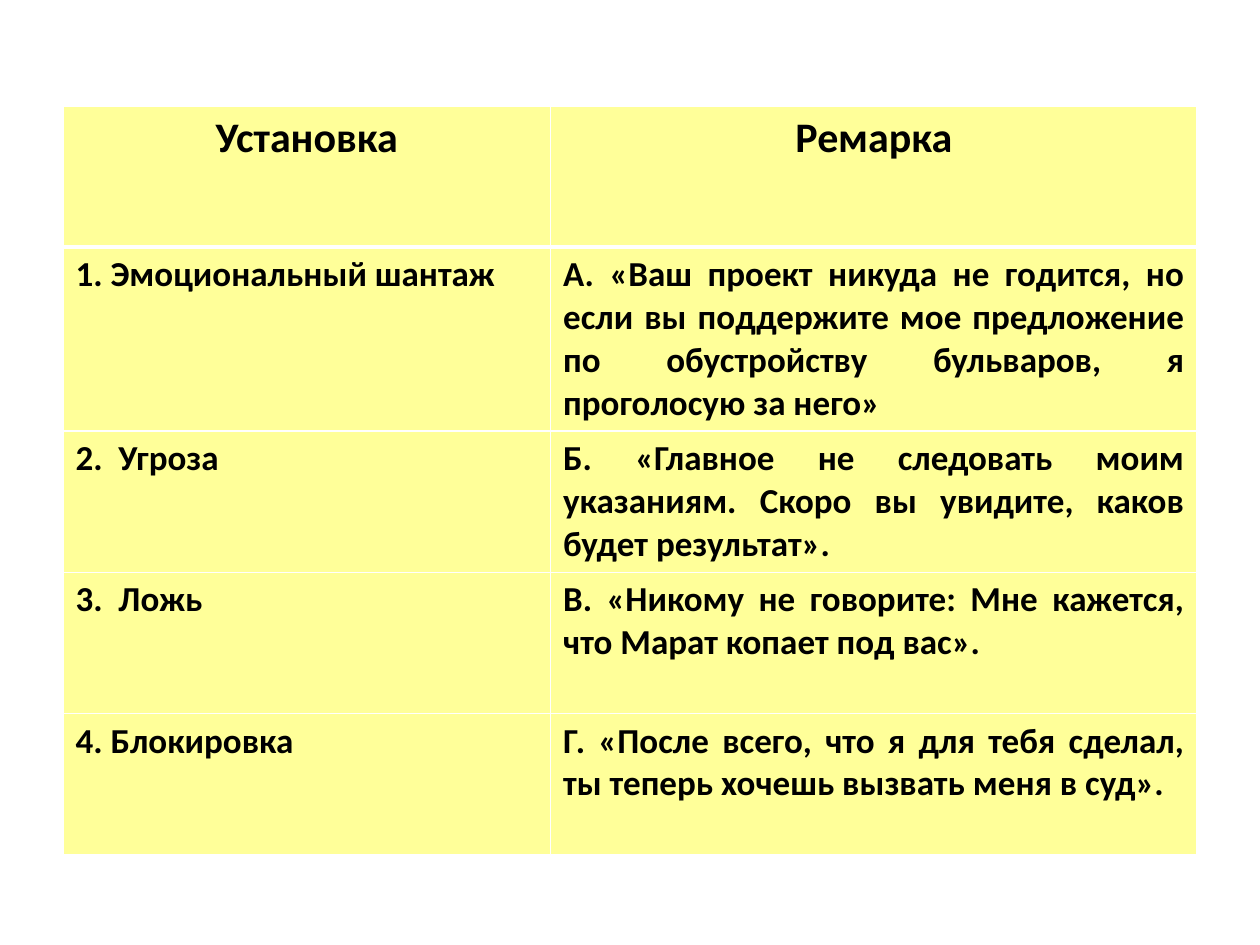
from dataclasses import dataclass

import lxml.etree
import pptx
import pptx.dml.color
import pptx.enum.text
import pptx.oxml.ns
import pptx.table
import pptx.util

Pt = pptx.util.Pt
Align = pptx.enum.text.PP_ALIGN
BLACK = pptx.dml.color.RGBColor(0x00, 0x00, 0x00)
WHITE = pptx.dml.color.RGBColor(0xFF, 0xFF, 0xFF)
YELLOW = pptx.dml.color.RGBColor(0xFF, 0xFF, 0x99)
FONT = "Calibri"
COLUMN_WIDTHS = (278.64, 369.36)
ROW_HEIGHT = 80.64


@dataclass(frozen=True)
class RowStyle:
    size: float
    align: Align
    top_line: float
    bottom_line: float


@dataclass(frozen=True)
class Row:
    attitude: str
    remark: str
    style: RowStyle


HEADING = RowStyle(24, Align.CENTER, 1, 3)
FIRST = RowStyle(20, Align.JUSTIFY, 3, 1)
BODY = RowStyle(20, Align.JUSTIFY, 1, 1)

ROWS = (
    Row("Установка", "Ремарка", HEADING),
    Row(
        "1. Эмоциональный шантаж",
        "А. «Ваш проект никуда не годится, но если вы поддержите мое "
        "предложение по обустройству бульваров, я проголосую за него»",
        FIRST,
    ),
    Row(
        "2.  Угроза",
        "Б. «Главное не следовать моим указаниям. Скоро вы увидите, "
        "каков будет результат».",
        BODY,
    ),
    Row(
        "3.  Ложь",
        "В. «Никому не говорите: Мне кажется, что Марат копает под вас».",
        BODY,
    ),
    Row(
        "4. Блокировка",
        "Г. «После всего, что я для тебя сделал, ты теперь хочешь "
        "вызвать меня в суд».",
        BODY,
    ),
)


def draw_borders(cell: pptx.table._Cell, style: RowStyle) -> None:
    name = pptx.oxml.ns.qn
    properties = cell._tc.get_or_add_tcPr()
    widths = {"L": 1, "R": 1, "T": style.top_line, "B": style.bottom_line}
    for side, width in widths.items():
        line = lxml.etree.SubElement(properties, name(f"a:ln{side}"), w=str(Pt(width)))
        fill = lxml.etree.SubElement(line, name("a:solidFill"))
        lxml.etree.SubElement(fill, name("a:srgbClr"), val=str(WHITE))


def fill_cell(cell: pptx.table._Cell, text: str, style: RowStyle) -> None:
    draw_borders(cell, style)
    cell.fill.solid()
    cell.fill.fore_color.rgb = YELLOW
    para = cell.text_frame.paragraphs[0]
    para.alignment = style.align
    span = para.add_run()
    span.text = text
    span.font.name = FONT
    span.font.size = Pt(style.size)
    span.font.bold = True
    span.font.color.rgb = BLACK


def main() -> None:
    deck = pptx.Presentation()
    deck.slide_width, deck.slide_height = Pt(720), Pt(540)
    page = deck.slides.add_slide(deck.slide_layouts[6])
    table = page.shapes.add_table(
        len(ROWS), len(COLUMN_WIDTHS), Pt(36), Pt(60.48),
        Pt(sum(COLUMN_WIDTHS)), Pt(ROW_HEIGHT * len(ROWS)),
    ).table
    for column, width in zip(table.columns, COLUMN_WIDTHS):
        column.width = Pt(width)
    for index, row in enumerate(ROWS):
        table.rows[index].height = Pt(ROW_HEIGHT)
        for column, text in enumerate((row.attitude, row.remark)):
            fill_cell(table.cell(index, column), text, row.style)
    deck.save("out.pptx")


if __name__ == "__main__":
    main()
